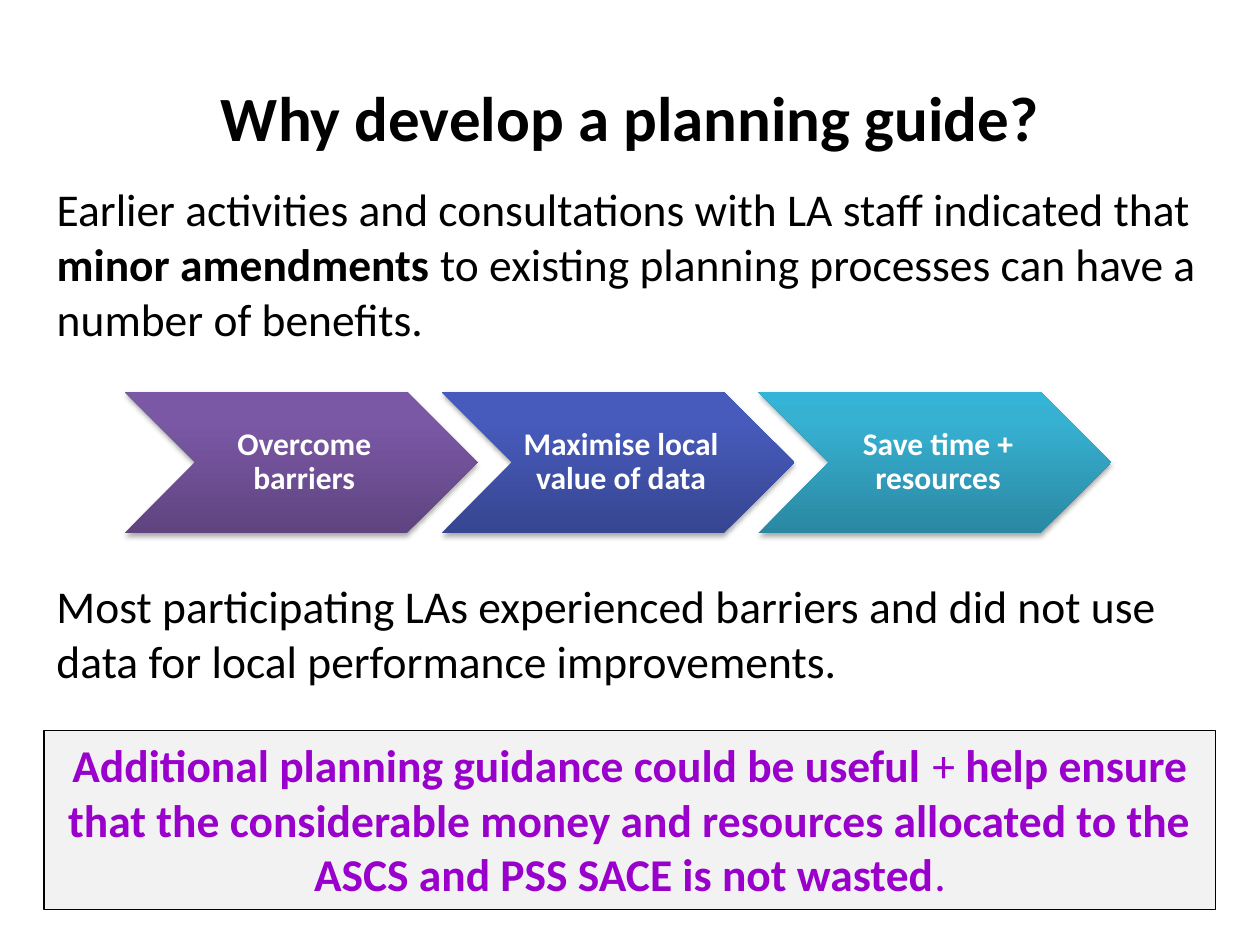
from lxml import etree
from pptx import Presentation, util as u
from pptx.dml.color import RGBColor
from pptx.enum import shapes, text
from pptx.oxml.ns import qn

BLACK = RGBColor(0x00, 0x00, 0x00)
WHITE = RGBColor(0xFF, 0xFF, 0xFF)
GREY = RGBColor(0xF2, 0xF2, 0xF2)
PURPLE = RGBColor(0x99, 0x00, 0xCC)

# Gradient colours at 0, 80 and 100 %, from the bottom up
VIOLET = [RGBColor(0x5F, 0x44, 0x80), RGBColor(0x7B, 0x58, 0xA6), RGBColor(0x7C, 0x57, 0xA8)]
BLUE = [RGBColor(0x37, 0x46, 0x91), RGBColor(0x47, 0x5B, 0xBC), RGBColor(0x45, 0x5A, 0xBF)]
TEAL = [RGBColor(0x2A, 0x88, 0xA2), RGBColor(0x37, 0xB1, 0xD2), RGBColor(0x34, 0xB4, 0xD6)]

LEFT = text.PP_ALIGN.LEFT
MID = text.PP_ALIGN.CENTER
TITLE = {"size": 36, "color": BLACK, "para": {"alignment": MID}}
BODY = {"size": 26, "color": BLACK,
        "para": {"alignment": LEFT, "space_before": u.Pt(5.2)}}
NOTE = {"size": 26, "color": PURPLE,
        "para": {"alignment": MID, "space_before": u.Pt(5.2)}}
STEP = {"size": 18, "color": WHITE,
        "para": {"alignment": MID, "line_spacing": 0.9, "space_after": u.Pt(6.3)}}


def add(parent, tag, **attrs):
    return etree.SubElement(parent, qn(tag), {k: str(v) for k, v in attrs.items()})


def assign(item, values):
    for name, value in values.items():
        setattr(item, name, value)


class Deck:
    font = "Calibri"

    def __init__(self):
        self.prs = Presentation()
        self.prs.slide_width = u.Inches(10)
        self.prs.slide_height = u.Inches(7.5)
        self.slide = self.prs.slides.add_slide(self.prs.slide_layouts[1])

    def letter(self, shape, runs, style, anchor=text.MSO_ANCHOR.TOP):
        """Fill a shape with one paragraph of (words, bold) runs."""
        frame = shape.text_frame
        assign(frame, {"word_wrap": True, "auto_size": text.MSO_AUTO_SIZE.NONE,
                       "vertical_anchor": anchor})
        para = frame.paragraphs[0]
        assign(para, style["para"])
        for words, bold in runs:
            run = para.add_run()
            run.text = words
            assign(run.font, {"name": self.font, "size": u.Pt(style["size"]), "bold": bold})
            run.font.color.rgb = style["color"]
        return para

    def place(self, index, box, runs, style, anchor=text.MSO_ANCHOR.TOP):
        """Move and fill a placeholder of the layout."""
        holder = self.slide.placeholders[index]
        assign(holder, dict(zip(("left", "top", "width", "height"), map(u.Inches, box))))
        return self.letter(holder, runs, style, anchor)

    def title(self, box, words):
        self.place(0, box, [(words, True)], TITLE, text.MSO_ANCHOR.MIDDLE)

    def body(self, box, runs):
        props = self.place(1, box, runs, BODY)._p.get_or_add_pPr()
        props.set("marL", "0")
        props.set("indent", "0")
        add(props, "a:buNone")

    def label(self, box, runs):
        self.letter(self.slide.shapes.add_textbox(*map(u.Inches, box)), runs, BODY)

    def panel(self, box, runs):
        rect = self.slide.shapes.add_shape(shapes.MSO_SHAPE.RECTANGLE, *map(u.Inches, box))
        rect.shadow.inherit = False
        rect.fill.solid()
        rect.fill.fore_color.rgb = GREY
        rect.line.color.rgb = BLACK
        rect.line.width = u.Pt(0.75)
        self.letter(rect, runs, NOTE)

    def step(self, box, words, shades):
        arrow = self.slide.shapes.add_shape(shapes.MSO_SHAPE.CHEVRON, *map(u.Inches, box))
        arrow.line.fill.background()
        self.blend(arrow, shades)
        self.shade(arrow)
        self.letter(arrow, [(words, True)], STEP, text.MSO_ANCHOR.MIDDLE)
        thin = u.Inches(0.03)
        assign(arrow.text_frame, {"margin_left": u.Inches(0.08), "margin_right": thin,
                                  "margin_top": thin, "margin_bottom": thin})

    def blend(self, shape, shades):
        """Give a shape an upward gradient of three colours."""
        shape.fill.gradient()
        shape.fill.gradient_angle = 90
        stops = shape._element.spPr.find(".//" + qn("a:gsLst"))
        for old in list(stops):
            stops.remove(old)
        for spot, shade in zip((0, 80, 100), shades):
            add(add(stops, "a:gs", pos=spot * 1000), "a:srgbClr", val=shade)

    def shade(self, shape):
        """Give a shape a soft shadow below it."""
        shape.shadow.inherit = False
        effects = shape._element.spPr.find(qn("a:effectLst"))
        shadow = add(effects, "a:outerShdw", blurRad=u.Pt(3.1), dist=u.Pt(1.8),
                     dir=90 * 60000, rotWithShape=0)
        add(add(shadow, "a:srgbClr", val=BLACK), "a:alpha", val=35000)


def main():
    deck = Deck()
    deck.title((0.5, 0.3, 9, 1.25), "Why develop a planning guide?")
    deck.body((0.35, 1.39, 9.3, 1.42), [
        ("Earlier activities and consultations with LA staff indicated that ", False),
        ("minor amendments ", True),
        ("to existing planning processes can have a number of benefits.", False)])

    steps = [("Overcome barriers", VIOLET),
             ("Maximise local value of data", BLUE),
             ("Save time + resources", TEAL)]
    for i, (words, shades) in enumerate(steps):
        deck.step((0.99 + 2.515 * i, 3.11, 2.8, 1.12), words, shades)

    deck.panel((0.35, 5.8, 9.3, 1.42), [
        ("Additional planning guidance could be useful", True),
        (" + ", False),
        ("help ensure that the considerable money and resources allocated to the "
         "ASCS and PSS SACE is not wasted", True),
        (".", False)])
    deck.label((0.35, 4.54, 9.3, 1.02), [
        ("Most participating LAs experienced barriers and did not use data for local "
         "performance improvements.", False)])
    deck.prs.save("out.pptx")


if __name__ == "__main__":
    main()
